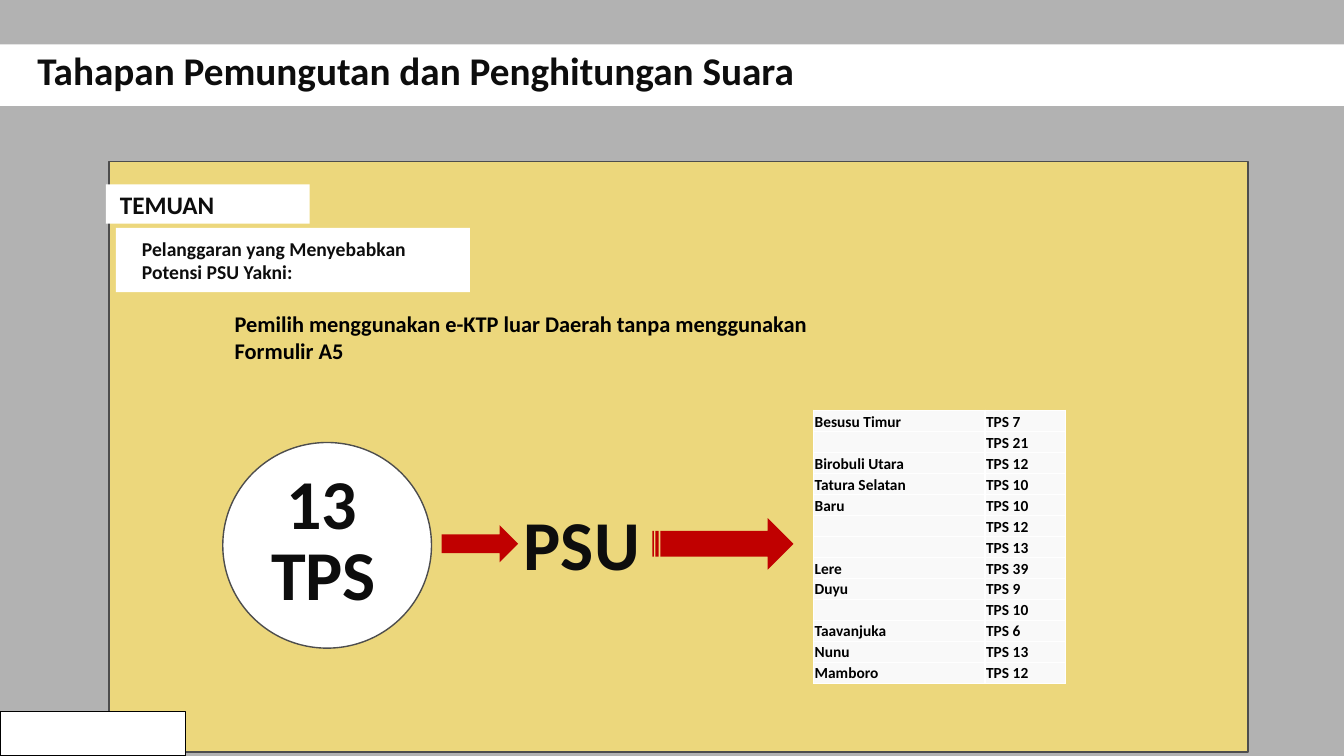
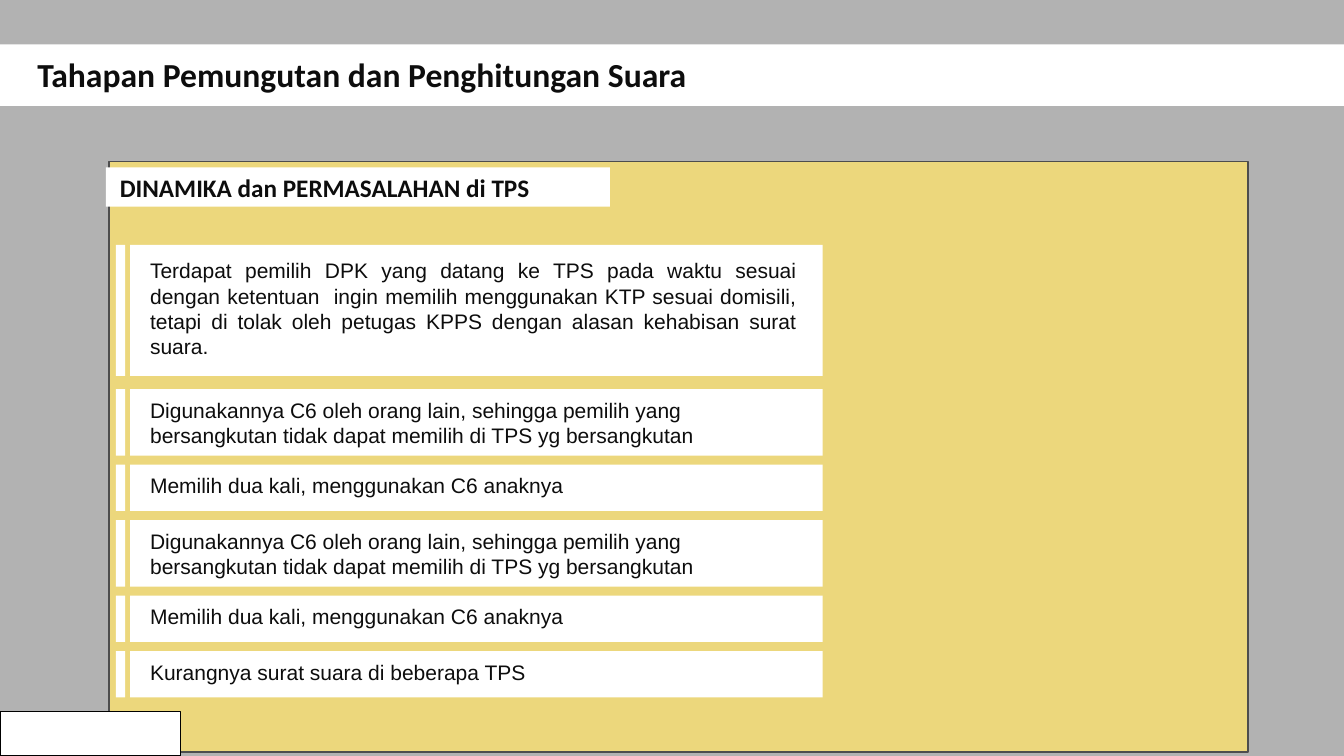
from collections import namedtuple
from dataclasses import dataclass

from lxml.etree import SubElement
from pptx import Presentation
from pptx.dml.color import RGBColor as RGB
from pptx.enum.shapes import MSO_SHAPE as Kind
from pptx.enum.text import MSO_ANCHOR as Anchor, MSO_AUTO_SIZE as Fit, PP_ALIGN as Align
from pptx.oxml.ns import qn
from pptx.util import Pt

PX = 9144
Box = namedtuple("Box", "x y w h")


@dataclass(frozen=True)
class Theme:
    page: str = "B2B2B2"
    board: str = "ECD77C"
    white: str = "FFFFFF"
    edge: str = "4D4D4D"
    black: str = "000000"
    ink: str = "0D0D0D"
    red: str = "C00000"
    cell: str = "F9F9F9"
    head: str = "Calibri"
    body: str = "Arial"
    huge: int = 50
    label: int = 18
    lead: int = 16
    item: int = 15
    note: int = 14
    small: int = 11


T = Theme()
BOARD = Box(108, 160, 1130, 586)
TITLE = "Tahapan Pemungutan dan Penghitungan Suara"
PLACES = [
    ("Besusu Timur", [7, 21]), ("Birobuli Utara", [12]), ("Tatura Selatan", [10]),
    ("Baru", [10, 12, 13]), ("Lere", [39]), ("Duyu", [9, 10]),
    ("Taavanjuka", [6]), ("Nunu", [13]), ("Mamboro", [12]),
]
MISUSE = ("Digunakannya C6 oleh orang lain, sehingga pemilih yang "
          "bersangkutan tidak dapat memilih di TPS yg bersangkutan")
TWICE = "Memilih dua kali, menggunakan C6 anaknya"
ISSUES = [
    ("Terdapat pemilih DPK yang datang ke TPS pada waktu sesuai dengan ketentuan  "
     "ingin memilih menggunakan KTP sesuai domisili, tetapi di tolak oleh petugas "
     "KPPS dengan alasan kehabisan surat suara.", 130, 8, 13, Align.JUSTIFY),
    (MISUSE, 66, 3, 9, Align.LEFT),
    (TWICE, 46, 3, 9, Align.LEFT),
    (MISUSE, 66, 3, 9, Align.LEFT),
    (TWICE, 46, 3, 9, Align.LEFT),
    ("Kurangnya surat suara di beberapa TPS", 46, 3, 9, Align.LEFT),
]


def emu(box):
    return [n * PX for n in box]


def inner(box, x, y, w, h):
    return Box(box.x + x, box.y + y, w, h)


def shape(slide, box, fill=T.white, line=None, kind=Kind.RECTANGLE):
    part = slide.shapes.add_shape(kind, *emu(box))
    part.shadow.inherit = False
    part.fill.solid()
    part.fill.fore_color.rgb = RGB.from_string(fill)
    if line:
        part.line.color.rgb = RGB.from_string(line)
        part.line.width = Pt(1)
    else:
        part.line.fill.background()


def write(frame, words, size, face=T.head, color=T.ink, bold=True, align=Align.LEFT):
    frame.word_wrap = True
    frame.text = words
    para = frame.paragraphs[0]
    para.alignment = align
    for run in para.runs:
        run.font.size = Pt(size)
        run.font.name = face
        run.font.bold = bold
        run.font.color.rgb = RGB.from_string(color)


def text(slide, box, words, size, **style):
    write(slide.shapes.add_textbox(*emu(box)).text_frame, words, size, **style)


def base(deck, size, top, foot):
    slide = deck.slides.add_slide(deck.slide_layouts[5])
    shape(slide, BOARD, T.board, T.edge)
    shape(slide, Box(0, 44, 1333, 61))
    title = slide.shapes.title
    title.left, title.top, title.width, title.height = emu(Box(27, top, 1186, 57))
    title.text_frame.auto_size = Fit.NONE
    title.text_frame.vertical_anchor = Anchor.TOP
    write(title.text_frame, TITLE, size)
    slide.shapes._spTree.append(title._element)
    shape(slide, Box(0, 706, foot, 44), T.white, T.black)
    return slide


def label(slide, box, words):
    shape(slide, box)
    text(slide, inner(box, 4, 0, box.w - 4, 40), words, T.label)


def border(cell):
    props = cell._tc.get_or_add_tcPr()
    for spot, side in enumerate(("a:lnL", "a:lnR", "a:lnT", "a:lnB")):
        line = props.makeelement(qn(side), {"w": str(Pt(1))})
        fill = SubElement(line, qn("a:solidFill"))
        SubElement(fill, qn("a:srgbClr"), val=T.white)
        props.insert(spot, line)


def places(slide, box):
    rows = [(name if not n else "", f"TPS {num}")
            for name, nums in PLACES for n, num in enumerate(nums)]
    table = slide.shapes.add_table(len(rows), 2, *emu(box)).table
    table.first_row = table.horz_banding = False
    for col, wide in zip(table.columns, (170, box.w - 170)):
        col.width = wide * PX
    for r, row in enumerate(rows):
        table.rows[r].height = box.h * PX // len(rows)
        for c, words in enumerate(row):
            cell = table.cell(r, c)
            cell.margin_left = cell.margin_right = cell.margin_top = PX
            cell.margin_bottom = 0
            cell.vertical_anchor = Anchor.BOTTOM
            cell.fill.solid()
            cell.fill.fore_color.rgb = RGB.from_string(T.cell)
            border(cell)
            write(cell.text_frame, words, T.small, color=T.black)
            if not words:
                para = cell.text_frame.paragraphs[0]._p
                SubElement(para, qn("a:endParaRPr"), sz=str(T.small * 100))


def flow(slide, box):
    shape(slide, inner(box, 0, 0, 207, 204), T.white, T.edge, Kind.OVAL)
    text(slide, inner(box, 53, 12, 96, 98), "13", T.huge)
    text(slide, inner(box, 38, 82, 132, 98), "TPS", T.huge)
    shape(slide, inner(box, 217, 82, 76, 37), T.red, kind=Kind.RIGHT_ARROW)
    text(slide, inner(box, 277, 53, 158, 94), "PSU", T.huge, align=Align.CENTER)
    shape(slide, inner(box, 426, 75, 140, 51), T.red, kind=Kind.STRIPED_RIGHT_ARROW)


def issues(slide, box):
    top = 0
    for words, high, pad, gap, align in ISSUES:
        shape(slide, inner(box, 0, top, 9, high))
        shape(slide, inner(box, 14, top, box.w - 14, high))
        text(slide, inner(box, 24, top + pad, box.w - 40, high - 2 * pad), words,
             T.item, face=T.body, bold=False, align=align)
        top += high + gap


def finds(deck):
    slide = base(deck, 28, 41, 184)
    label(slide, inner(BOARD, -3, 23, 202, 39), "TEMUAN")
    shape(slide, inner(BOARD, 7, 66, 351, 64))
    text(slide, inner(BOARD, 23, 70, 336, 57),
         "Pelanggaran yang Menyebabkan Potensi PSU Yakni:", T.note)
    text(slide, inner(BOARD, 115, 143, 597, 64),
         "Pemilih menggunakan e-KTP luar Daerah tanpa menggunakan Formulir A5",
         T.lead, color=T.black)
    places(slide, inner(BOARD, 699, 247, 250, 271))
    flow(slide, inner(BOARD, 113, 279, 566, 204))


def woes(deck):
    slide = base(deck, 24, 48, 179)
    label(slide, inner(BOARD, -3, 6, 500, 39), "DINAMIKA dan PERMASALAHAN di TPS")
    issues(slide, inner(BOARD, 7, 83, 701, 449))


def main():
    deck = Presentation()
    deck.slide_width, deck.slide_height = 1333 * PX, 750 * PX
    back = deck.slide_master.background.fill
    back.solid()
    back.fore_color.rgb = RGB.from_string(T.page)
    finds(deck)
    woes(deck)
    deck.save("out.pptx")


if __name__ == "__main__":
    main()
